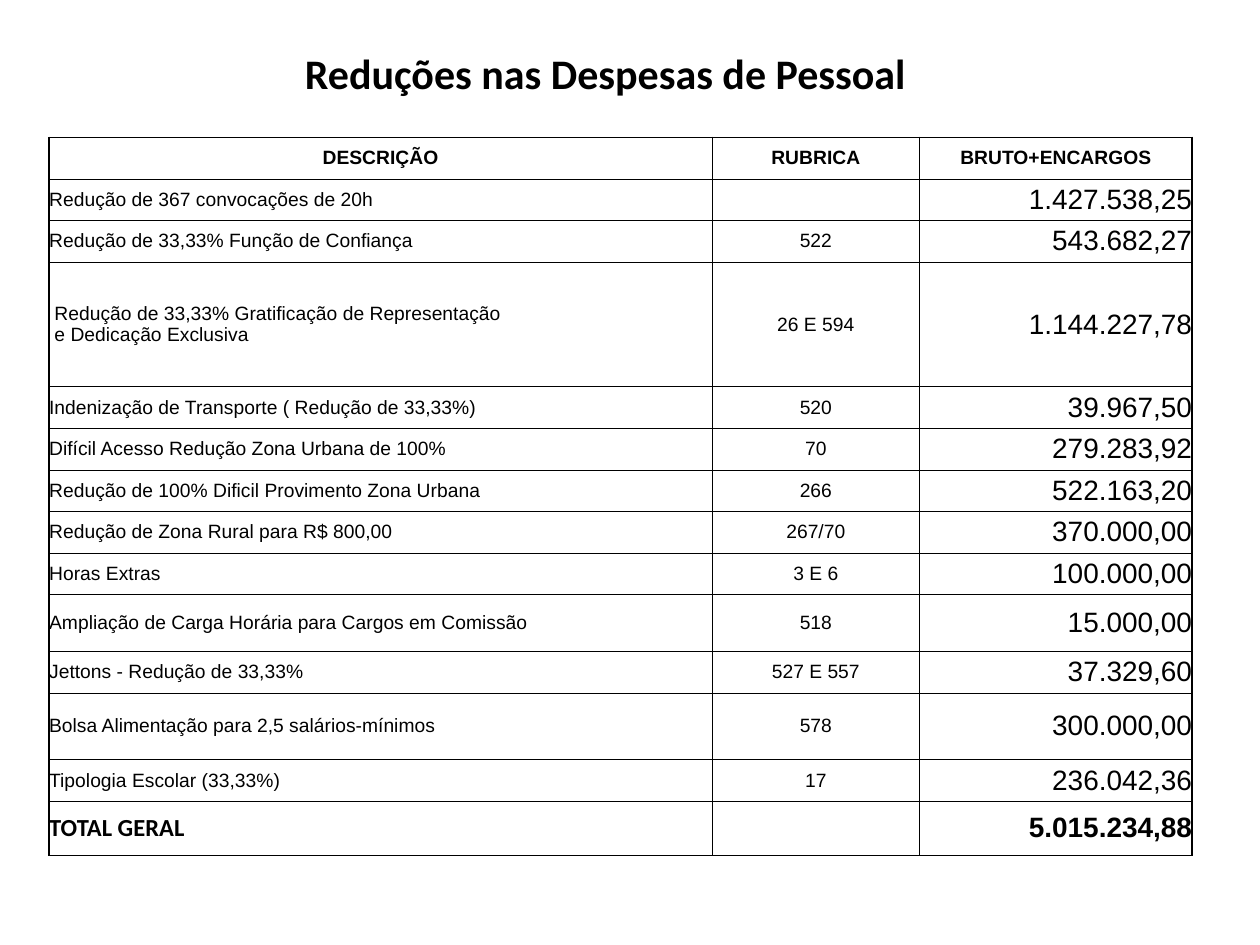
"""Build a slide with a table of cuts in staff costs."""
from lxml.etree import SubElement as Sub
from pptx import Presentation
from pptx.dml.color import RGBColor
from pptx.enum.text import MSO_ANCHOR as Anchor, PP_ALIGN as Align
from pptx.oxml.ns import qn
from pptx.util import Inches, Pt

INK = "000000"


def write(frame, text, align, size, face="Arial", bold=False, tint=INK):
    para = frame.paragraphs[0]
    para.alignment = align
    for i, line in enumerate(text.split("\n")):
        if i:
            para.add_line_break()
        run = para.add_run()
        run.text = line
        font = run.font
        font.name, font.size, font.bold = face, Pt(size), bold
        font.color.rgb = RGBColor.from_string(tint)


def edge(cell, side, width, tint=INK):
    line = Sub(cell._tc.get_or_add_tcPr(), qn("a:ln" + side), w=str(Pt(width)))
    Sub(Sub(line, qn("a:solidFill")), qn("a:srgbClr"), val=tint)


rows = [
    ("DESCRIÇÃO", "RUBRICA", "BRUTO+ENCARGOS"),
    ("Redução de 367 convocações de 20h", "", "1.427.538,25"),
    ("Redução de 33,33% Função de Confiança", "522", "543.682,27"),
    (" Redução de 33,33% Gratificação de Representação\n e Dedicação Exclusiva",
     "26 E 594", "1.144.227,78"),
    ("Indenização de Transporte ( Redução de 33,33%)", "520", "39.967,50"),
    ("Difícil Acesso Redução Zona Urbana de 100%", "70", "279.283,92"),
    ("Redução de 100% Dificil Provimento Zona Urbana", "266", "522.163,20"),
    ("Redução de Zona Rural para R$ 800,00", "267/70", "370.000,00"),
    ("Horas Extras", "3 E 6", "100.000,00"),
    ("Ampliação de Carga Horária para Cargos em Comissão", "518", "15.000,00"),
    ("Jettons - Redução de 33,33%", "527 E 557", "37.329,60"),
    ("Bolsa Alimentação para 2,5 salários-mínimos", "578", "300.000,00"),
    ("Tipologia Escolar (33,33%)", "17", "236.042,36"),
    ("TOTAL GERAL", "", "5.015.234,88"),
]
wides = [5.26, 1.65, 2.16]
talls = {3: 0.99, 9: 0.45, 11: 0.53, 13: 0.43}
aligns = [Align.LEFT, Align.CENTER, Align.RIGHT]
last = len(rows) - 1

deck = Presentation()
deck.slide_width, deck.slide_height = Inches(10), Inches(7.5)
slide = deck.slides.add_slide(deck.slide_layouts[6])

title = slide.shapes.add_textbox(Inches(1.46), Inches(0.33), Inches(6.69), Inches(0.5))
title.text_frame.word_wrap = True
write(title.text_frame, "Reduções nas Despesas de Pessoal", Align.CENTER, 24, "Calibri", True)

table = slide.shapes.add_table(len(rows), len(wides), Inches(0.39), Inches(1.09),
                               Inches(9.06), Inches(5.68)).table
table.first_row = table.horz_banding = False
for col, wide in zip(table.columns, wides):
    col.width = Inches(wide)

for r, row in enumerate(rows):
    table.rows[r].height = Inches(talls.get(r, 0.33))
    for c, text in enumerate(row):
        cell = table.cell(r, c)
        cell.margin_left = cell.margin_right = cell.margin_top = cell.margin_bottom = 0
        cell.vertical_anchor = Anchor.MIDDLE
        outer = {"L": c == 0, "R": c == 2, "T": r == 0, "B": r == last}
        for side, thick in outer.items():
            edge(cell, side, 1 if thick else 0.5)
        cell.fill.background()
        if not text:
            continue
        total = r == last and c == 0
        size = 14 if total else 16 if r and c == 2 else 11
        write(cell.text_frame, text, aligns[c] if r else Align.CENTER, size,
              "Calibri" if total else "Arial", r in (0, last))

deck.save("out.pptx")
